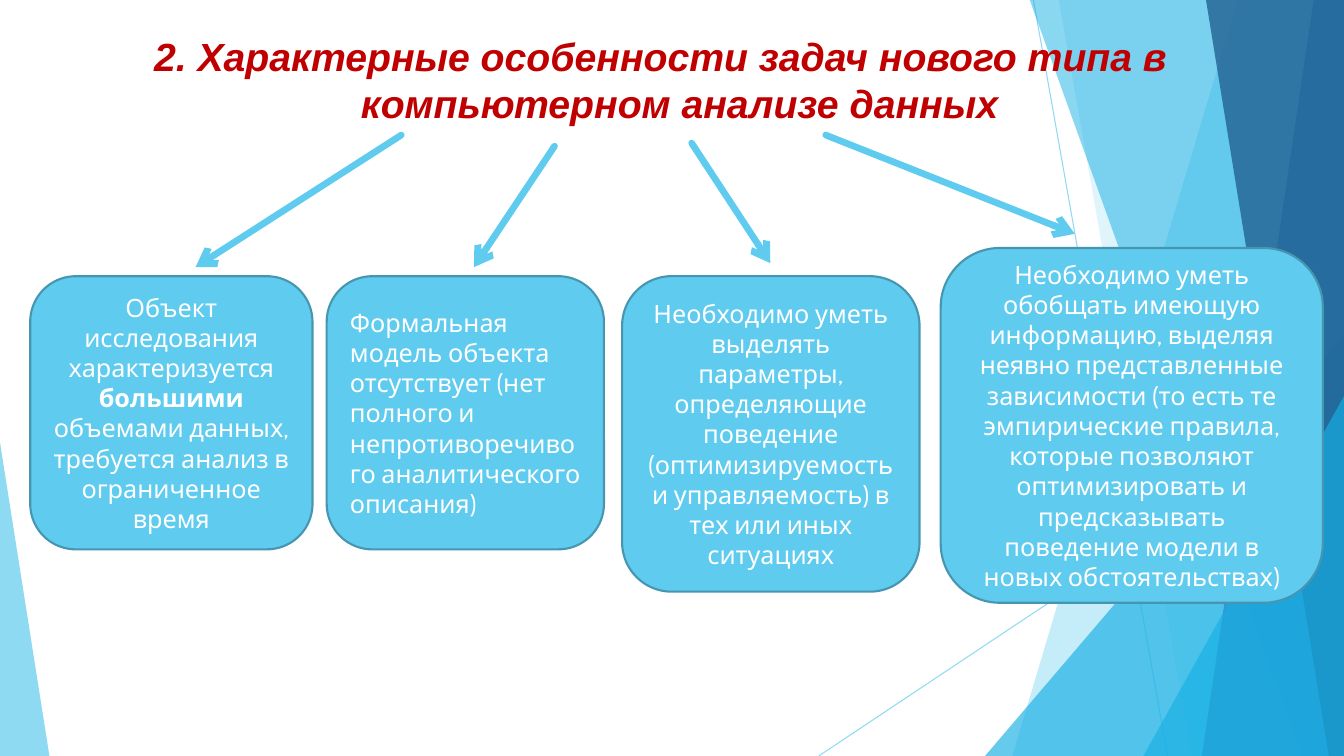
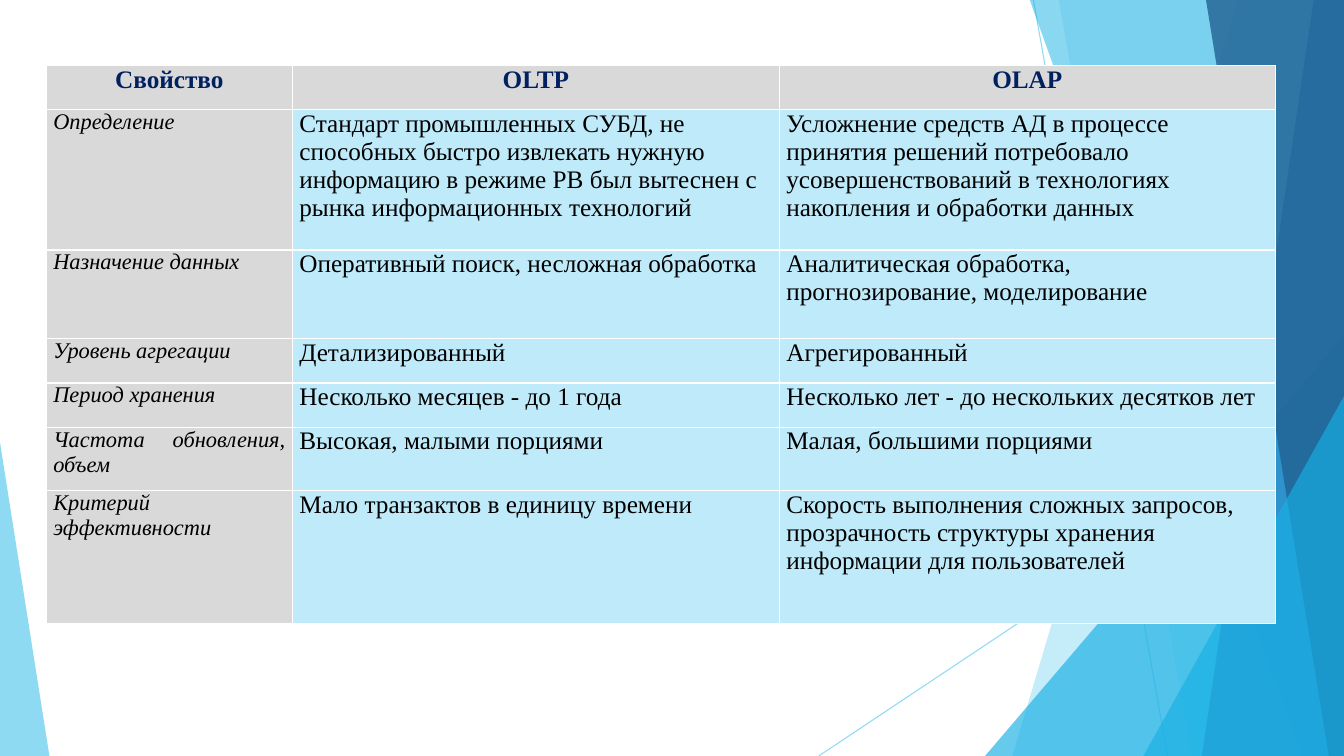
from lxml.etree import SubElement
from pptx import Presentation
from pptx.dml.color import RGBColor
from pptx.enum.shapes import MSO_CONNECTOR, MSO_SHAPE
from pptx.enum.text import MSO_ANCHOR, PP_ALIGN
from pptx.oxml.ns import qn
from pptx.util import Inches, Pt

WIDTH, HEIGHT = 13.33, 7.5
COLORS = {
    "sky": "5FCBEF",
    "cyan": "17B0E4",
    "blue": "2E83C3",
    "navy": "226292",
    "edge": "4696B1",
    "title": "C00000",
    "header": "002060",
    "label": "D9D9D9",
    "cell": "BFEAF9",
    "white": "FFFFFF",
    "black": "000000",
}

BANDS = [
    (12.28, 10.04, "sky", 36),
    (10.5, 11.82, "sky", 20),
    (10.21, 12.91, "cyan", 50),
    (13.03, 11.92, "blue", 70),
    (11.96, 13.18, "navy", 80),
]

CARDS = [
    ((0.3, 2.74, 2.8, 2.71), PP_ALIGN.CENTER, [
        ("Объект исследования характеризуется ", False),
        ("большими", True),
        (" объемами данных, требуется анализ в ограниченное время", False),
    ]),
    ((3.24, 2.74, 2.75, 2.71), PP_ALIGN.LEFT, [
        ("Формальная модель объекта отсутствует (нет полного и "
         "непротиворечивого аналитического описания)", False),
    ]),
    ((6.17, 2.74, 2.95, 3.13), PP_ALIGN.CENTER, [
        ("Необходимо уметь выделять параметры, определяющие поведение "
         "(оптимизируемость и управляемость) в тех или иных ситуациях", False),
    ]),
    ((9.33, 2.46, 3.79, 3.52), PP_ALIGN.CENTER, [
        ("Необходимо уметь обобщать имеющую информацию, выделяя неявно "
         "представленные зависимости (то есть те эмпирические правила, "
         "которые позволяют оптимизировать и предсказывать поведение "
         "модели в новых обстоятельствах)", False),
    ]),
]

ARROWS = [
    ((3.98, 1.34), (1.94, 2.65)),
    ((5.5, 1.45), (4.7, 2.65)),
    ((6.86, 1.42), (7.64, 2.61)),
    ((8.19, 1.34), (10.66, 2.32)),
]

COL_WIDTHS = [2.44, 4.83, 4.92]
ROW_HEIGHTS = [0.44, 1.39, 0.88, 0.44, 0.44, 0.63, 1.32]
ROWS = [
    ("Свойство", "OLTP", "OLAP"),
    ("Определение",
     "Стандарт промышленных СУБД, не способных быстро извлекать нужную "
     "информацию в режиме РВ был вытеснен с рынка информационных технологий",
     "Усложнение средств АД в процессе принятия решений потребовало "
     "усовершенствований в технологиях накопления и обработки данных"),
    ("Назначение данных",
     "Оперативный поиск, несложная обработка",
     "Аналитическая обработка, прогнозирование, моделирование"),
    ("Уровень агрегации", "Детализированный", "Агрегированный"),
    ("Период хранения",
     "Несколько месяцев - до 1 года",
     "Несколько лет - до нескольких десятков лет"),
    ("Частота обновления, объем",
     "Высокая, малыми порциями",
     "Малая, большими порциями"),
    ("Критерий эффективности",
     "Мало транзактов в единицу времени",
     "Скорость выполнения сложных запросов, прозрачность структуры хранения "
     "информации для пользователей"),
]


def rgb(name):
    return RGBColor.from_string(COLORS[name])


def set_alpha(sp, percent):
    for clr in sp._element.spPr.iter(qn("a:srgbClr")):
        SubElement(clr, qn("a:alpha"), val=str(percent * 1000))


def paint(sp, color, alpha=None):
    sp.shadow.inherit = False
    sp.fill.solid()
    sp.fill.fore_color.rgb = rgb(color)
    sp.line.fill.background()
    if alpha:
        set_alpha(sp, alpha)


def add_run(p, text, font, size, color, bold=False, italic=False):
    r = p.add_run()
    r.text = text
    r.font.name = font
    r.font.size = Pt(size)
    r.font.color.rgb = rgb(color)
    r.font.bold = bold
    r.font.italic = italic


def add_line(s, start, end, width):
    cn = s.shapes.add_connector(
        MSO_CONNECTOR.STRAIGHT, *map(Inches, start), *map(Inches, end))
    cn.line.color.rgb = rgb("sky")
    cn.line.width = Pt(width)
    SubElement(cn._element.spPr, qn("a:effectLst"))
    return cn


def add_arrow(s, start, end):
    cn = add_line(s, start, end, 4.75)
    ln = cn._element.spPr.find(qn("a:ln"))
    ln.set("cap", "rnd")
    SubElement(ln, qn("a:tailEnd"), type="arrow")


def add_band(s, top_x, bottom_x, color, alpha):
    top = Inches(-0.01)
    right, bottom = Inches(WIDTH), Inches(HEIGHT)
    fb = s.shapes.build_freeform(Inches(top_x), top)
    fb.add_line_segments(
        [(right, top), (right, bottom), (Inches(bottom_x), bottom)], close=True)
    paint(fb.convert_to_shape(), color, alpha)


def add_triangle(s, left, top, width, apex, color, alpha):
    sp = s.shapes.add_shape(
        MSO_SHAPE.ISOSCELES_TRIANGLE, Inches(left), Inches(top),
        Inches(width), Inches(HEIGHT - top))
    sp.adjustments[0] = apex
    paint(sp, color, alpha)


def add_backdrop(s):
    for start, end in [((10.25, 0), (11.58, HEIGHT)),
                       ((WIDTH, 4.03), (8.12, HEIGHT))]:
        set_alpha(add_line(s, start, end, 0.75), 70)
    for band in BANDS[:2]:
        add_band(s, *band)
    add_triangle(s, 9.77, 3.33, 3.56, 1, "cyan", 66)
    for band in BANDS[2:]:
        add_band(s, *band)
    add_triangle(s, 11.34, 3.93, 1.99, 1, "cyan", 66)
    add_triangle(s, 0, 4.39, 0.49, 0, "sky", 70)


def add_slide(prs):
    s = prs.slides.add_slide(prs.slide_layouts[6])
    add_backdrop(s)
    return s


def add_title(s, text):
    box = s.shapes.add_textbox(
        Inches(0), Inches(0.27), Inches(13.1), Inches(1.07))
    tf = box.text_frame
    tf.word_wrap = True
    p = tf.paragraphs[0]
    p.alignment = PP_ALIGN.CENTER
    pPr = p._p.get_or_add_pPr()
    pPr.set("marL", str(Inches(0.38)))
    pPr.set("indent", str(Inches(-0.38)))
    add_run(p, text, "Arial", 28, "title", bold=True, italic=True)


def add_card(s, at, align, runs):
    sp = s.shapes.add_shape(MSO_SHAPE.ROUNDED_RECTANGLE, *map(Inches, at))
    paint(sp, "sky")
    sp.line.color.rgb = rgb("edge")
    sp.line.width = Pt(1.5)
    tf = sp.text_frame
    tf.word_wrap = True
    tf.vertical_anchor = MSO_ANCHOR.MIDDLE
    p = tf.paragraphs[0]
    p.alignment = align
    for text, bold in runs:
        add_run(p, text, "Cabin", 18, "white", bold=bold)


def add_borders(cell):
    tcPr = cell._tc.get_or_add_tcPr()
    for side in ("lnL", "lnR", "lnT", "lnB"):
        ln = SubElement(tcPr, qn(f"a:{side}"), w=str(Pt(1)))
        fill = SubElement(ln, qn("a:solidFill"))
        SubElement(fill, qn("a:srgbClr"), val=COLORS["white"])


def fill_cell(cell, text, row, col):
    header, label = row == 0, row > 0 and col == 0
    add_borders(cell)
    cell.fill.solid()
    cell.fill.fore_color.rgb = rgb("label" if header or label else "cell")
    cell.margin_left = cell.margin_right = Inches(0.07)
    cell.margin_top = cell.margin_bottom = 0
    p = cell.text_frame.paragraphs[0]
    if header:
        p.alignment = PP_ALIGN.CENTER
    elif label and row > 1:
        p.alignment = PP_ALIGN.JUSTIFY
    else:
        p.alignment = PP_ALIGN.LEFT
    add_run(p, text, "Times New Roman", 16 if label else 18,
            "header" if header else "black", bold=header, italic=label)


def add_comparison(s):
    table = s.shapes.add_table(
        len(ROWS), len(COL_WIDTHS), Inches(0.46), Inches(0.65),
        Inches(sum(COL_WIDTHS)), Inches(sum(ROW_HEIGHTS))).table
    table.horz_banding = False
    for column, width in zip(table.columns, COL_WIDTHS):
        column.width = Inches(width)
    for i, texts in enumerate(ROWS):
        table.rows[i].height = Inches(ROW_HEIGHTS[i])
        for j, text in enumerate(texts):
            fill_cell(table.cell(i, j), text, i, j)


def main():
    prs = Presentation()
    prs.slide_width = Inches(WIDTH)
    prs.slide_height = Inches(HEIGHT)

    s = add_slide(prs)
    add_title(s, "2. Характерные особенности задач нового типа в "
                 "компьютерном анализе данных")
    for card in CARDS:
        add_card(s, *card)
    for start, end in ARROWS:
        add_arrow(s, start, end)

    add_comparison(add_slide(prs))
    prs.save("out.pptx")


if __name__ == "__main__":
    main()
